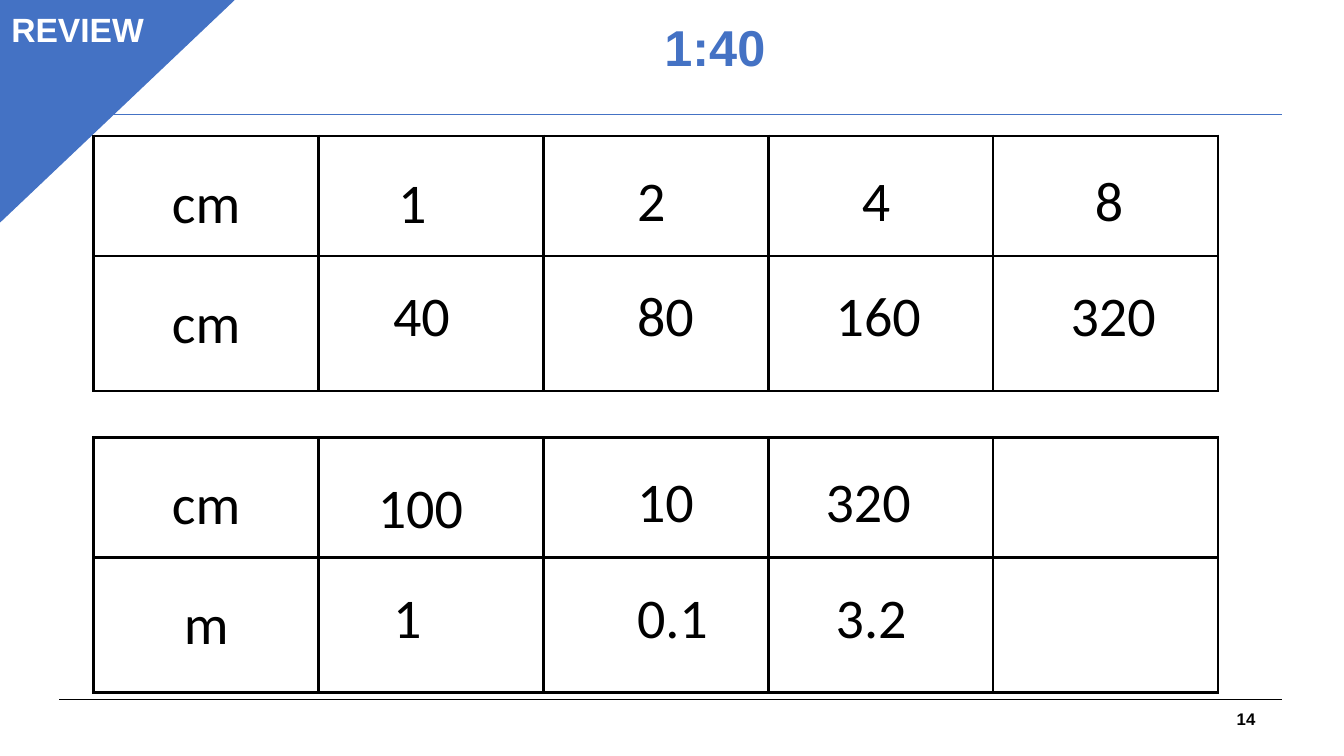
import pptx
import pptx.dml.color
import pptx.enum.shapes
import pptx.enum.text
import pptx.oxml
import pptx.oxml.ns
import pptx.util
from lxml import etree

Inches = pptx.util.Inches
Pt = pptx.util.Pt
ALIGN = pptx.enum.text.PP_ALIGN
ANCHOR = pptx.enum.text.MSO_ANCHOR
SHAPE = pptx.enum.shapes.MSO_SHAPE
BLUE, BLACK, WHITE = "4472C4", "000000", "FFFFFF"
COLUMN_WIDTH = 2.23
ROW_HEIGHTS = [1.19, 1.34]


def color(hex_code):
    return pptx.dml.color.RGBColor.from_string(hex_code)


def write(frame, text, size, font="Calibri", ink=BLACK, bold=False, align=ALIGN.LEFT):
    """Fill a text frame with one formatted paragraph and return the paragraph."""
    frame.text = text
    frame.word_wrap = True
    para = frame.paragraphs[0]
    para.alignment = align
    span = para.runs[0]
    span.font.size = Pt(size)
    span.font.name = font
    span.font.bold = bold
    span.font.color.rgb = color(ink)
    return para


deck = pptx.Presentation()
deck.slide_width = Inches(13.33)
deck.slide_height = Inches(7.5)
page = deck.slides.add_slide(deck.slide_layouts[5])

# Title
title = page.shapes.title
title.left, title.top = Inches(2.09), Inches(-0.06)
title.width, title.height = Inches(10), Inches(1.11)
title.text_frame.vertical_anchor = ANCHOR.MIDDLE
para = write(title.text_frame, "1:40", 36, "Arial", BLUE, True, ALIGN.CENTER)
para.line_spacing = 0.9

# Rules above and below the content
for y, ink in [(1.14, BLUE), (6.94, BLACK)]:
    rule = page.shapes.add_connector(
        pptx.enum.shapes.MSO_CONNECTOR.STRAIGHT,
        Inches(0.59), Inches(y), Inches(12.72), Inches(y))
    rule.line.color.rgb = color(ink)
    rule.line.width = Pt(0.75 if ink == BLUE else 1)
    etree.SubElement(rule._element.spPr, pptx.oxml.ns.qn("a:effectLst"))

# Slide number
box = page.shapes.add_textbox(Inches(9.55), Inches(6.93), Inches(3), Inches(0.4))
box.text_frame.vertical_anchor = ANCHOR.MIDDLE
write(box.text_frame, "14", 12, "Arial", BLACK, True, ALIGN.RIGHT)

# Ratio tables: top edge and the unit of each row
for top, units in [(1.35, ["cm", "cm"]), (4.34, ["cm", "m"])]:
    frame = page.shapes.add_table(
        2, 5, Inches(0.93), Inches(top), Inches(5 * COLUMN_WIDTH), Inches(sum(ROW_HEIGHTS)))
    table = frame.table
    table.first_row = table.horz_banding = False
    for column in table.columns:
        column.width = Inches(COLUMN_WIDTH)
    for row, height, unit in zip(table.rows, ROW_HEIGHTS, units):
        row.height = Inches(height)
        for cell in row.cells:
            cell.margin_left = cell.margin_right = Inches(0.07)
            cell.margin_top = cell.margin_bottom = 0
            properties = cell._tc.get_or_add_tcPr()
            for side in ["lnL", "lnR", "lnT", "lnB"]:
                properties.append(pptx.oxml.parse_xml(
                    f'<a:{side} {pptx.oxml.ns.nsdecls("a")} w="{Pt(2.25)}"><a:solidFill>'
                    f'<a:srgbClr val="{BLACK}"/></a:solidFill></a:{side}>'))
            cell.fill.background()
        para = write(row.cells[0].text_frame, unit, 40, align=ALIGN.CENTER)
        para.line_spacing = 1.5
        para.space_after = Pt(8)

# Answers laid over the tables: top, then left edge and text of each
answer_rows = [
    (1.59, [(3.85, "1"), (6.22, "2"), (8.45, "4"), (10.76, "8")]),
    (2.73, [(3.8, "40"), (6.22, "80"), (8.19, "160"), (10.52, "320")]),
    (4.58, [(3.65, "100"), (6.22, "10"), (8.09, "320")]),
    (5.73, [(3.8, "1"), (6.22, "0.1"), (8.19, "3.2")]),
]
first_column_drop = {"1": 0.02, "100": 0.06}
for top, answers in answer_rows:
    for left, answer in answers:
        drop = first_column_drop.get(answer, 0) if top in (1.59, 4.58) else 0
        box = page.shapes.add_textbox(
            Inches(left), Inches(top + drop), Inches(1.1), Inches(0.77))
        write(box.text_frame, answer, 40)

# Corner flag
corner = page.shapes.add_shape(
    SHAPE.ISOSCELES_TRIANGLE, 0, Inches(-0.02), Inches(2.34), Inches(2.22))
corner.adjustments[0] = 0
corner._element.spPr.xfrm.set("flipV", "1")
label = page.shapes.add_shape(SHAPE.RECTANGLE, 0, Inches(0.04), Inches(1.54), Inches(0.5))
for shape, line_width in [(corner, 1), (label, 0.75)]:
    shape.shadow.inherit = False
    shape.fill.solid()
    shape.fill.fore_color.rgb = color(BLUE)
    shape.line.color.rgb = color(BLUE)
    shape.line.width = Pt(line_width)
label.text_frame.vertical_anchor = ANCHOR.TOP
write(label.text_frame, "REVIEW", 24, "Arial", WHITE, True, ALIGN.CENTER)
# The label is as wide as its word, so it must stay on one line
label.text_frame.word_wrap = False

deck.save("out.pptx")
